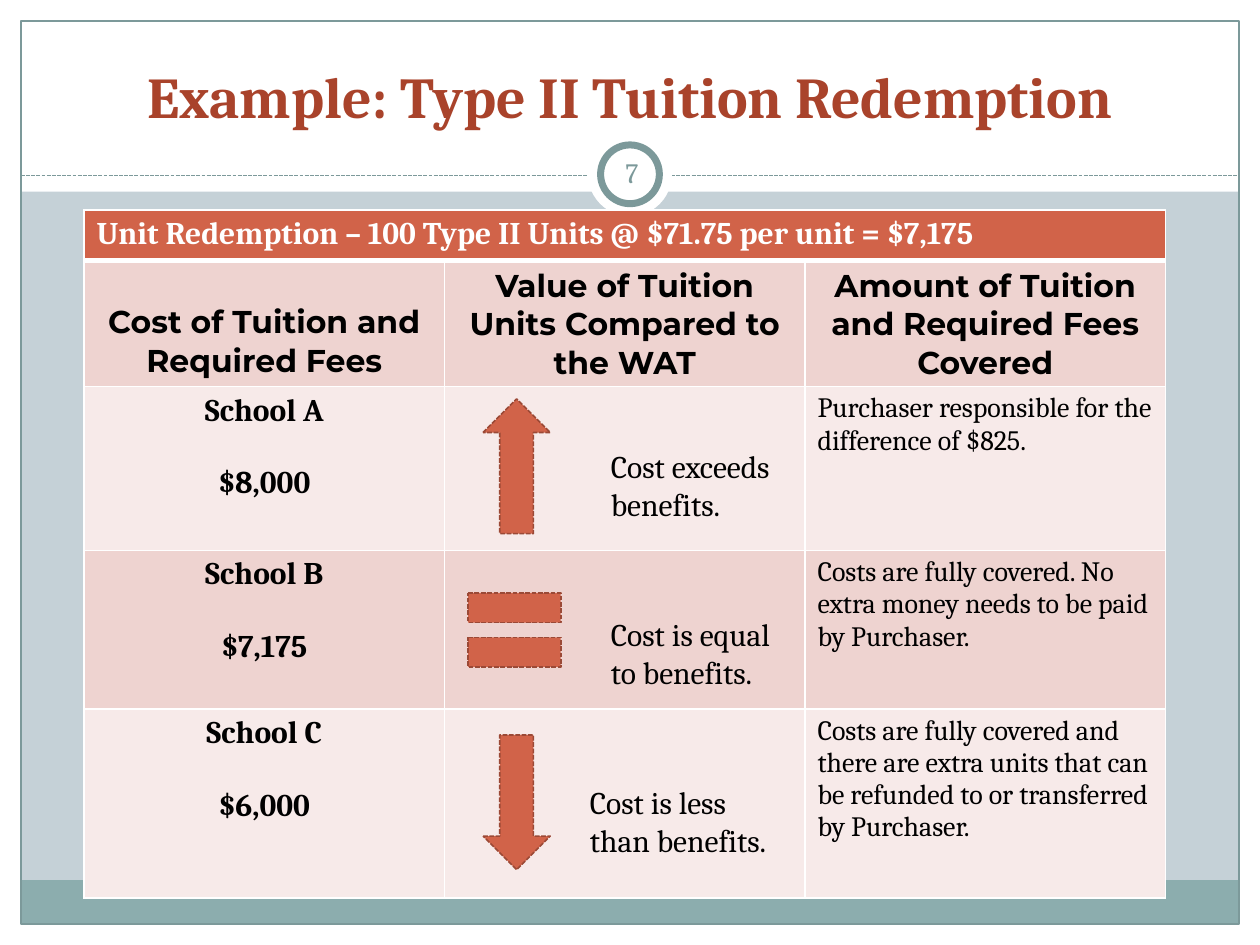
"""Build the Type II tuition redemption example slide."""
from dataclasses import dataclass

from lxml import etree
from pptx import Presentation
from pptx.dml.color import RGBColor
from pptx.enum.dml import MSO_LINE
from pptx.enum.shapes import MSO_CONNECTOR, MSO_SHAPE
from pptx.enum.text import MSO_ANCHOR, MSO_AUTO_SIZE, PP_ALIGN
from pptx.oxml.ns import qn
from pptx.util import Pt

RECTANGLE, OVAL = MSO_SHAPE.RECTANGLE, MSO_SHAPE.OVAL
UP, EQUAL, DOWN = MSO_SHAPE.UP_ARROW, MSO_SHAPE.MATH_EQUAL, MSO_SHAPE.DOWN_ARROW
LEFT, CENTER = PP_ALIGN.LEFT, PP_ALIGN.CENTER
TOP, MIDDLE, BOTTOM = MSO_ANCHOR.TOP, MSO_ANCHOR.MIDDLE, MSO_ANCHOR.BOTTOM
DASH = MSO_LINE.SQUARE_DOT
TITLE_ONLY = 5

SERIF, SANS = "Cambria", "Montserrat"
WHITE, BLACK, GRAY_BLUE, TEAL, GRAY = "FFFFFF", "000000", "C5D1D7", "8CADAE", "7C999A"
RUST, ORANGE, BROWN = "A9432B", "D16349", "9B4936"
DARK_BAND, LIGHT_BAND = "EED3D0", "F7EAE9"

COLUMN_WIDTH = 206
ROW_HEIGHTS = (28.8, 72, 93.6, 90.7, 108)
BANNER = "Unit Redemption – 100 Type II Units @ $71.75 per unit = $7,175"
HEADINGS = (
    "Cost of Tuition and Required Fees",
    "Value of Tuition Units Compared to the WAT",
    "Amount of Tuition and Required Fees Covered",
)


@dataclass
class Box:
    left: float
    top: float
    width: float
    height: float

    def lengths(self) -> tuple:
        return Pt(self.left), Pt(self.top), Pt(self.width), Pt(self.height)


@dataclass
class Panel:
    kind: int
    box: Box
    fill: str | None = WHITE
    line: str | None = None
    weight: float = 0.75
    dash: int | None = None


@dataclass
class School:
    name: str
    cost: str
    outcome: str
    band: str
    symbol: int
    symbol_box: Box
    comparison: str
    comparison_box: Box


PANELS = (
    Panel(RECTANGLE, Box(0, 528, 720, 12)),
    Panel(RECTANGLE, Box(0, 0, 720, 109.5)),
    Panel(RECTANGLE, Box(0, 0, 12, 540)),
    Panel(RECTANGLE, Box(708, 0, 12, 540)),
    Panel(RECTANGLE, Box(12, 503, 696, 25), TEAL),
    Panel(RECTANGLE, Box(12, 12, 696, 516), None, GRAY),
)
BADGE = (
    Panel(OVAL, Box(336, 75.6, 48, 48)),
    Panel(OVAL, Box(343.2, 82.8, 33.6, 33.6), WHITE, GRAY, 4),
)
SCHOOLS = (
    School("School A", "$8,000", "Purchaser responsible for the difference of $825.",
           LIGHT_BAND, UP, Box(276, 228, 38.4, 77),
           "Cost exceeds\nbenefits.", Box(342, 252, 117, 51)),
    School("School B", "$7,175",
           "Costs are fully covered. No extra money needs to be paid by Purchaser.",
           DARK_BAND, EQUAL, Box(258, 324, 72, 72),
           "Cost is equal\nto benefits.", Box(342, 348, 120, 51)),
    School("School C", "$6,000",
           "Costs are fully covered and there are extra units that can be "
           "refunded to or transferred by Purchaser.",
           LIGHT_BAND, DOWN, Box(276, 420, 38.4, 77),
           "Cost is less\nthan benefits.", Box(330, 444, 132, 51)),
)


def color(value: str) -> RGBColor:
    return RGBColor.from_string(value)


def write(frame, text: str, *, size: float = 18, font: str = SERIF, ink: str = BLACK,
          bold: bool = False, align: int = LEFT, gap: float = 0) -> None:
    for index, line in enumerate(text.split("\n")):
        paragraph = frame.add_paragraph() if index else frame.paragraphs[0]
        paragraph.alignment = align
        if index and gap:
            paragraph.space_before = Pt(gap)
        run = paragraph.add_run()
        run.text = line
        run.font.name, run.font.size, run.font.bold = font, Pt(size), bold
        run.font.color.rgb = color(ink)


def add_panel(slide, panel: Panel) -> None:
    shape = slide.shapes.add_shape(panel.kind, *panel.box.lengths())
    shape.shadow.inherit = False
    if panel.fill:
        shape.fill.solid()
        shape.fill.fore_color.rgb = color(panel.fill)
    else:
        shape.fill.background()
    if panel.line:
        shape.line.color.rgb = color(panel.line)
        shape.line.width = Pt(panel.weight)
        shape.line.dash_style = panel.dash
    else:
        shape.line.fill.background()


def add_text(slide, box: Box, text: str, *, anchor: int = TOP,
             margin: float | None = None, **style) -> None:
    frame = slide.shapes.add_textbox(*box.lengths()).text_frame
    frame.word_wrap = True
    frame.vertical_anchor = anchor
    if margin is not None:
        frame.margin_left = frame.margin_right = Pt(margin)
        frame.margin_top = frame.margin_bottom = Pt(margin)
    write(frame, text, **style)


def add_divider(slide) -> None:
    line = slide.shapes.add_connector(
        MSO_CONNECTOR.STRAIGHT, Pt(12), Pt(100.5), Pt(708), Pt(100.5))
    line.line.color.rgb = color(GRAY)
    line.line.width = Pt(0.75)
    line.line.dash_style = DASH
    etree.SubElement(line.element.spPr, qn("a:effectLst"))


def style_cell(cell, fill: str, bottom: float = 1) -> None:
    cell.fill.solid()
    cell.fill.fore_color.rgb = color(fill)
    properties = cell._tc.get_or_add_tcPr()
    widths = {"lnL": 1, "lnR": 1, "lnT": 1, "lnB": bottom}
    for position, (side, width) in enumerate(widths.items()):
        border = etree.Element(qn(f"a:{side}"), w=str(int(Pt(width))))
        solid = etree.SubElement(border, qn("a:solidFill"))
        etree.SubElement(solid, qn("a:srgbClr"), val=WHITE)
        properties.insert(position, border)


def add_redemption_table(slide) -> None:
    box = Box(48, 120, 3 * COLUMN_WIDTH, sum(ROW_HEIGHTS))
    table = slide.shapes.add_table(len(ROW_HEIGHTS), 3, *box.lengths()).table
    for column in table.columns:
        column.width = Pt(COLUMN_WIDTH)
    for row, height in zip(table.rows, ROW_HEIGHTS):
        row.height = Pt(height)
    bands = (ORANGE, DARK_BAND, *(school.band for school in SCHOOLS))
    for index, band in enumerate(bands):
        for cell in table.rows[index].cells:
            style_cell(cell, band, bottom=1 if index else 3)
    table.cell(0, 0).merge(table.cell(0, 2))
    write(table.cell(0, 0).text_frame, BANNER, ink=WHITE, bold=True)
    for cell, heading in zip(table.rows[1].cells, HEADINGS):
        cell.vertical_anchor = BOTTOM
        write(cell.text_frame, heading, font=SANS, bold=True, align=CENTER)
    for index, school in enumerate(SCHOOLS, start=2):
        write(table.cell(index, 0).text_frame, f"{school.name}\n{school.cost}",
              bold=True, align=CENTER, gap=20.7)
        write(table.cell(index, 2).text_frame, school.outcome, size=16)


def format_title(slide) -> None:
    title = slide.shapes.title
    title.left, title.top, title.width, title.height = Box(24, 18, 672, 60).lengths()
    title.text_frame.auto_size = MSO_AUTO_SIZE.NONE
    title.text_frame.vertical_anchor = BOTTOM
    write(title.text_frame, "Example: Type II Tuition Redemption",
          size=33, ink=RUST, bold=True, align=CENTER)
    title.element.getparent().append(title.element)


def main() -> None:
    presentation = Presentation()
    presentation.slide_width, presentation.slide_height = Pt(720), Pt(540)
    slide = presentation.slides.add_slide(presentation.slide_layouts[TITLE_ONLY])
    slide.background.fill.solid()
    slide.background.fill.fore_color.rgb = color(GRAY_BLUE)
    for panel in PANELS:
        add_panel(slide, panel)
    add_divider(slide)
    for panel in BADGE:
        add_panel(slide, panel)
    format_title(slide)
    add_text(slide, Box(343.2, 81, 36, 34.6), "7", anchor=MIDDLE, margin=3.6,
             size=16, ink=GRAY, align=CENTER)
    add_redemption_table(slide)
    for school in SCHOOLS:
        add_panel(slide, Panel(school.symbol, school.symbol_box, ORANGE, BROWN, 0.9, DASH))
        add_text(slide, school.comparison_box, school.comparison)
    presentation.save("out.pptx")


if __name__ == "__main__":
    main()
